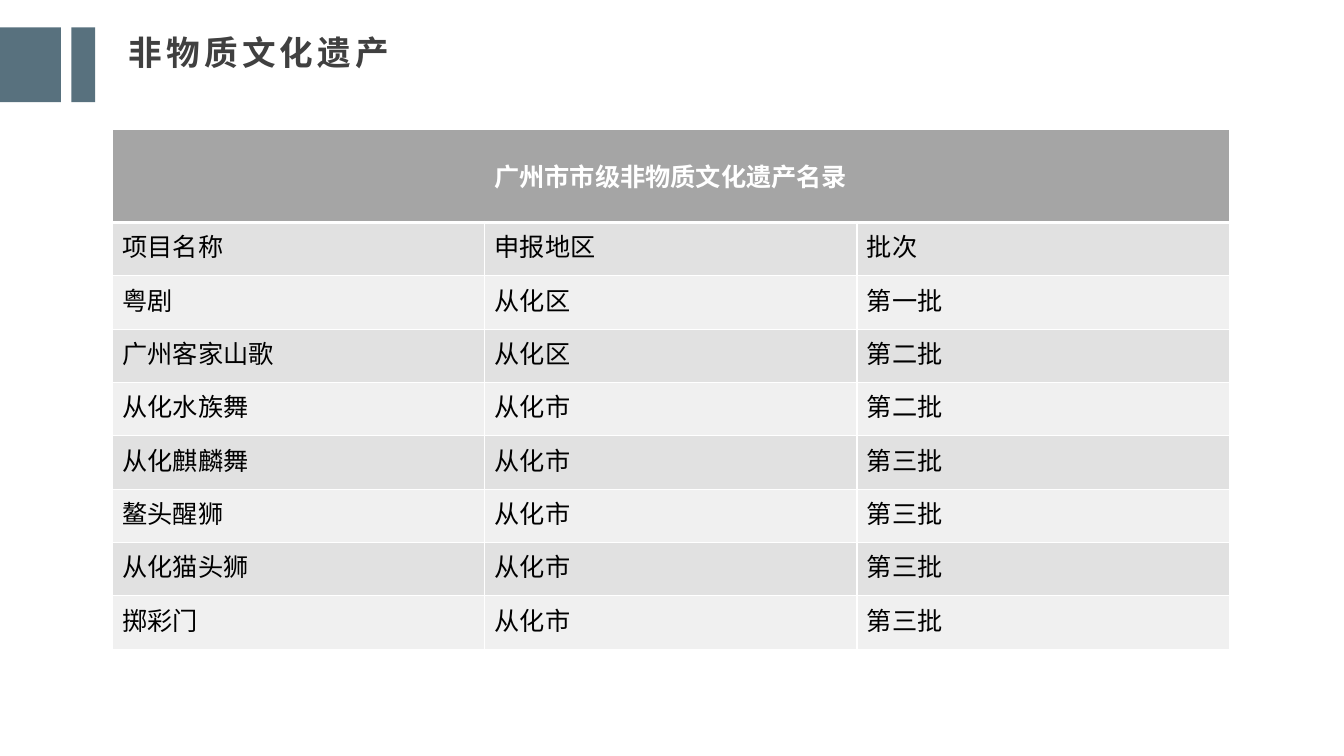
from lxml import etree
from pptx import Presentation
from pptx import util as u
from pptx.dml.color import RGBColor
from pptx.enum import shapes, text
from pptx.oxml import ns

FONT = "Noto Sans CJK SC"
SLATE = RGBColor(0x58, 0x71, 0x7E)
DARK = RGBColor(0x40, 0x40, 0x40)
BLACK = RGBColor(0, 0, 0)
WHITE = RGBColor(0xFF, 0xFF, 0xFF)
HEADER = RGBColor(0xA5, 0xA5, 0xA5)
BANDS = (RGBColor(0xE1, 0xE1, 0xE1), RGBColor(0xF0, 0xF0, 0xF0))

HERITAGE_TITLE = "广州市市级非物质文化遗产名录"
HERITAGE = [
    ("项目名称", "申报地区", "批次"),
    ("粤剧", "从化区", "第一批"),
    ("广州客家山歌", "从化区", "第二批"),
    ("从化水族舞", "从化市", "第二批"),
    ("从化麒麟舞", "从化市", "第三批"),
    ("鳌头醒狮", "从化市", "第三批"),
    ("从化猫头狮", "从化市", "第三批"),
    ("掷彩门", "从化市", "第三批"),
]


def write(frame, words, size=18, color=BLACK, bold=False, spacing=0,
          align=text.PP_ALIGN.LEFT):
    paragraph = frame.paragraphs[0]
    paragraph.alignment = align
    run = paragraph.add_run()
    run.text = words
    font = run.font
    font.size, font.bold, font.name = u.Pt(size), bold, FONT
    font.color.rgb = color
    props = run._r.get_or_add_rPr()
    etree.SubElement(props, ns.qn("a:ea"), typeface=FONT)
    if spacing:
        props.set("spc", str(spacing * 100))


def set_borders(cell, top=1, bottom=1):
    props = cell._tc.get_or_add_tcPr()
    widths = {"lnL": 1, "lnR": 1, "lnT": top, "lnB": bottom}
    for position, (side, width) in enumerate(widths.items()):
        line = etree.Element(ns.qn(f"a:{side}"), w=str(u.Pt(width)))
        fill = etree.SubElement(line, ns.qn("a:solidFill"))
        etree.SubElement(fill, ns.qn("a:srgbClr"), val=str(WHITE))
        props.insert(position, line)


class HeritageSlide:
    def __init__(self, deck):
        self.slide = deck.slides.add_slide(deck.slide_layouts[6])

    def bar(self, left, top, width, height, color=SLATE):
        bar = self.slide.shapes.add_shape(
            shapes.MSO_SHAPE.RECTANGLE, *map(u.Pt, (left, top, width, height)))
        bar.shadow.inherit = False
        bar.fill.solid()
        bar.fill.fore_color.rgb = color
        bar.line.fill.background()

    def heading(self, words, left, top, width, height):
        box = self.slide.shapes.add_textbox(*map(u.Pt, (left, top, width, height)))
        frame = box.text_frame
        frame.word_wrap = True
        frame.margin_left = frame.margin_right = u.Pt(5)
        frame.margin_top = frame.margin_bottom = u.Pt(2.5)
        write(frame, words, size=24, color=DARK, bold=True, spacing=3)

    def table(self, title, rows, left, top, width, title_height, row_height):
        columns = len(rows[0])
        height = title_height + row_height * len(rows)
        table = self.slide.shapes.add_table(
            len(rows) + 1, columns, *map(u.Pt, (left, top, width, height))).table
        for column in table.columns:
            column.width = u.Pt(width / columns)
        for row in table.rows:
            row.height = u.Pt(row_height)
        table.rows[0].height = u.Pt(title_height)

        # Title row across all columns
        for column in range(columns):
            self.cell(table.cell(0, column), HEADER, bottom=3)
        banner = table.cell(0, 0)
        banner.merge(table.cell(0, columns - 1))
        banner.vertical_anchor = text.MSO_ANCHOR.MIDDLE
        write(banner.text_frame, title, color=WHITE, bold=True,
              align=text.PP_ALIGN.CENTER)

        # Banded rows
        for index, entries in enumerate(rows):
            for column, entry in enumerate(entries):
                cell = table.cell(index + 1, column)
                self.cell(cell, BANDS[index % 2], top=1 if index else 3)
                write(cell.text_frame, entry)

    def cell(self, cell, color, **borders):
        cell.fill.solid()
        cell.fill.fore_color.rgb = color
        set_borders(cell, **borders)


def main():
    deck = Presentation()
    deck.slide_width, deck.slide_height = u.Pt(960), u.Pt(540)
    page = HeritageSlide(deck)

    # Heading with its accent bars
    page.heading("非物质文化遗产", 87, 20, 798, 34)
    page.bar(0, 19.5, 43.5, 53.5)
    page.bar(51, 19.5, 17, 53.5)

    # Heritage list
    page.table(HERITAGE_TITLE, HERITAGE, left=80.3, top=92.2, width=797.7,
               title_height=66.7, row_height=38.1)
    deck.save("out.pptx")


if __name__ == "__main__":
    main()
